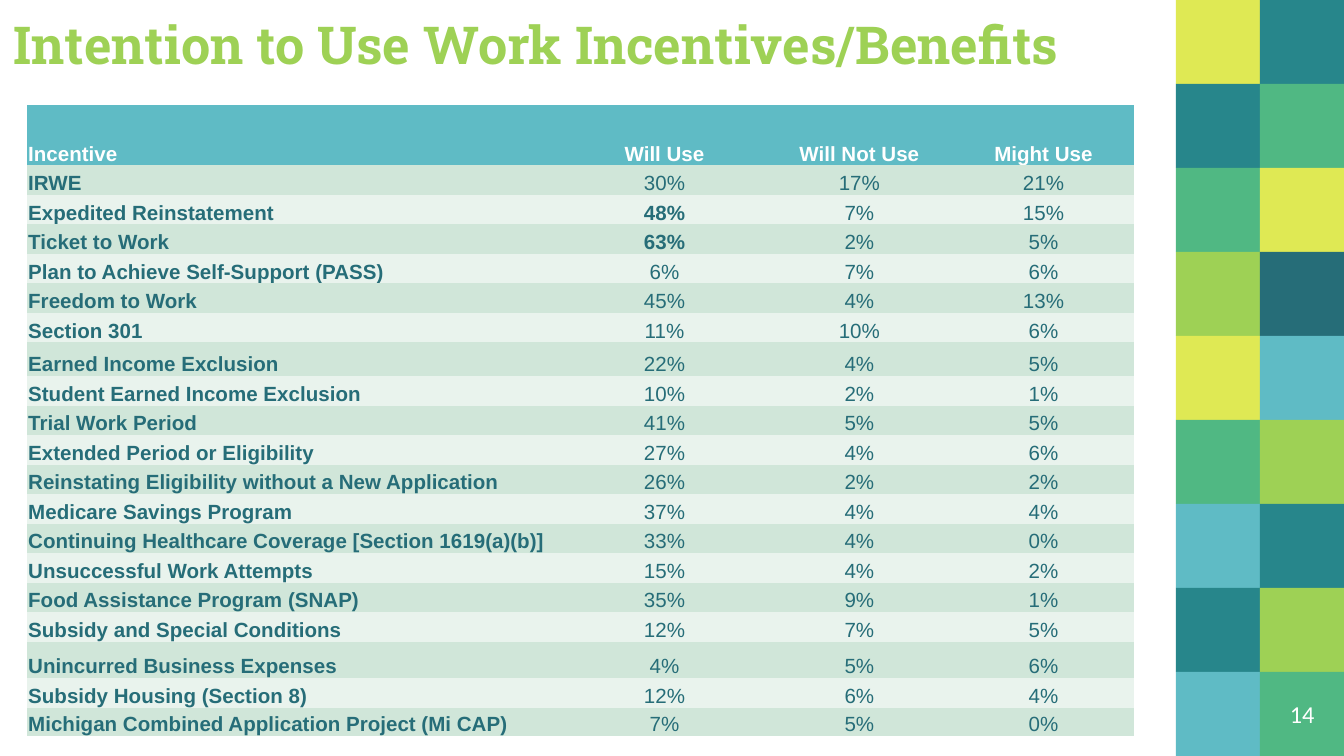
from typing import NamedTuple

import pptx
import pptx.dml.color
import pptx.enum.shapes
import pptx.enum.text
import pptx.oxml.ns
import pptx.slide
import pptx.text.text
import pptx.util

RGBColor = pptx.dml.color.RGBColor
Inches = pptx.util.Inches
Align = pptx.enum.text.PP_ALIGN
Anchor = pptx.enum.text.MSO_ANCHOR

LIME = RGBColor(0x9E, 0xD1, 0x55)
YELLOW = RGBColor(0xDF, 0xE9, 0x54)
GREEN = RGBColor(0x50, 0xB8, 0x83)
TEAL = RGBColor(0x27, 0x86, 0x8B)
SKY = RGBColor(0x5F, 0xBB, 0xC5)
DEEP_TEAL = RGBColor(0x26, 0x6D, 0x78)
WHITE = RGBColor(0xFF, 0xFF, 0xFF)
BANDS = (RGBColor(0xD0, 0xE6, 0xD9), RGBColor(0xE9, 0xF3, 0xED))

TILE = 0.625
TILE_LEFT = 8.75
TILE_ROWS = [
    (YELLOW, TEAL),
    (TEAL, GREEN),
    (GREEN, YELLOW),
    (LIME, DEEP_TEAL),
    (YELLOW, SKY),
    (GREEN, LIME),
    (SKY, TEAL),
    (TEAL, LIME),
    (SKY, GREEN),
]

NO_GRID_STYLE = "{2D5ABB26-0587-4C30-8999-92F81FD0307C}"
HEADINGS = ("Incentive", "Will Use", "Will Not Use", "Might Use")
COLUMN_WIDTHS = (3.99, 1.51, 1.39, 1.35)
HEADING_HEIGHT = 0.45


class Incentive(NamedTuple):
    name: str
    will_use: int
    will_not_use: int
    might_use: int
    height: float = 0.22
    highlight: bool = False


INCENTIVES = [
    Incentive("IRWE", 30, 17, 21),
    Incentive("Expedited Reinstatement", 48, 7, 15, highlight=True),
    Incentive("Ticket to Work", 63, 2, 5, highlight=True),
    Incentive("Plan to Achieve Self-Support (PASS)", 6, 7, 6),
    Incentive("Freedom to Work", 45, 4, 13),
    Incentive("Section 301", 11, 10, 6),
    Incentive("Earned Income Exclusion", 22, 4, 5, height=0.25),
    Incentive("Student Earned Income Exclusion", 10, 2, 1),
    Incentive("Trial Work Period", 41, 5, 5),
    Incentive("Extended Period or Eligibility", 27, 4, 6),
    Incentive("Reinstating Eligibility without a New Application", 26, 2, 2),
    Incentive("Medicare Savings Program", 37, 4, 4),
    Incentive("Continuing Healthcare Coverage [Section 1619(a)(b)]", 33, 4, 0),
    Incentive("Unsuccessful Work Attempts", 15, 4, 2),
    Incentive("Food Assistance Program (SNAP)", 35, 9, 1),
    Incentive("Subsidy and Special Conditions", 12, 7, 5),
    Incentive("Unincurred Business Expenses", 4, 5, 6, height=0.27),
    Incentive("Subsidy Housing (Section 8)", 12, 6, 4),
    Incentive("Michigan Combined Application Project (Mi CAP)", 7, 5, 0, height=0.21),
]


def write(frame: pptx.text.text.TextFrame, words: str, font: str, size: float,
          color: RGBColor, bold: bool, align: Align) -> None:
    paragraph = frame.paragraphs[0]
    paragraph.alignment = align
    run = paragraph.add_run()
    run.text = words
    run.font.name = font
    run.font.size = pptx.util.Pt(size)
    run.font.bold = bold
    run.font.color.rgb = color


def pad(frame: pptx.text.text.TextFrame, anchor: Anchor) -> None:
    frame.word_wrap = True
    frame.auto_size = pptx.enum.text.MSO_AUTO_SIZE.NONE
    frame.vertical_anchor = anchor
    frame.margin_left = frame.margin_right = Inches(0.1)
    frame.margin_top = frame.margin_bottom = Inches(0.1)


def add_tiles(slide: pptx.slide.Slide) -> None:
    for row, colors in enumerate(TILE_ROWS):
        for column, color in enumerate(colors):
            tile = slide.shapes.add_shape(
                pptx.enum.shapes.MSO_SHAPE.RECTANGLE,
                Inches(TILE_LEFT + column * TILE), Inches(row * TILE),
                Inches(TILE), Inches(TILE))
            tile.shadow.inherit = False
            tile.fill.solid()
            tile.fill.fore_color.rgb = color
            tile.line.fill.background()


def add_title(slide: pptx.slide.Slide) -> None:
    title = slide.shapes.title
    title.left, title.top = Inches(0), Inches(0)
    title.width, title.height = Inches(8.65), Inches(0.66)
    pad(title.text_frame, Anchor.BOTTOM)
    write(title.text_frame, "Intention to Use Work Incentives/Benefits",
          "Roboto Slab", 28, LIME, True, Align.LEFT)


def add_page_number(slide: pptx.slide.Slide) -> None:
    page_number = slide.shapes.add_textbox(
        Inches(TILE_LEFT + TILE), Inches(8 * TILE), Inches(TILE), Inches(TILE))
    pad(page_number.text_frame, Anchor.MIDDLE)
    write(page_number.text_frame, "14", "Calibri", 13, WHITE, False, Align.CENTER)


def add_incentive_table(slide: pptx.slide.Slide) -> None:
    heights = [HEADING_HEIGHT] + [incentive.height for incentive in INCENTIVES]
    frame = slide.shapes.add_table(
        len(heights), len(HEADINGS), Inches(0.2), Inches(0.78),
        Inches(sum(COLUMN_WIDTHS)), Inches(sum(heights)))
    for style in frame.element.iter(pptx.oxml.ns.qn("a:tableStyleId")):
        style.text = NO_GRID_STYLE
    table = frame.table
    for column, width in zip(table.columns, COLUMN_WIDTHS):
        column.width = Inches(width)
    for row, height in zip(table.rows, heights):
        row.height = Inches(height)

    def fill_cell(row: int, column: int, words: str, fill: RGBColor,
                  color: RGBColor, bold: bool) -> None:
        cell = table.cell(row, column)
        cell.fill.solid()
        cell.fill.fore_color.rgb = fill
        cell.vertical_anchor = Anchor.BOTTOM
        cell.margin_left = cell.margin_right = cell.margin_top = Inches(0.01)
        cell.margin_bottom = 0
        write(cell.text_frame, words, "Arial", 11, color, bold,
              Align.CENTER if column else Align.LEFT)

    for column, heading in enumerate(HEADINGS):
        fill_cell(0, column, heading, SKY, WHITE, True)
    for row, incentive in enumerate(INCENTIVES, start=1):
        band = BANDS[(row - 1) % 2]
        fill_cell(row, 0, incentive.name, band, DEEP_TEAL, True)
        shares = (incentive.will_use, incentive.will_not_use, incentive.might_use)
        for column, share in enumerate(shares, start=1):
            fill_cell(row, column, f"{share}%", band, DEEP_TEAL,
                      incentive.highlight and column == 1)


def main() -> None:
    presentation = pptx.Presentation()
    presentation.slide_width = Inches(10)
    presentation.slide_height = Inches(5.625)
    slide = presentation.slides.add_slide(presentation.slide_layouts[5])
    add_tiles(slide)
    add_title(slide)
    add_page_number(slide)
    add_incentive_table(slide)
    presentation.save("out.pptx")


if __name__ == "__main__":
    main()
